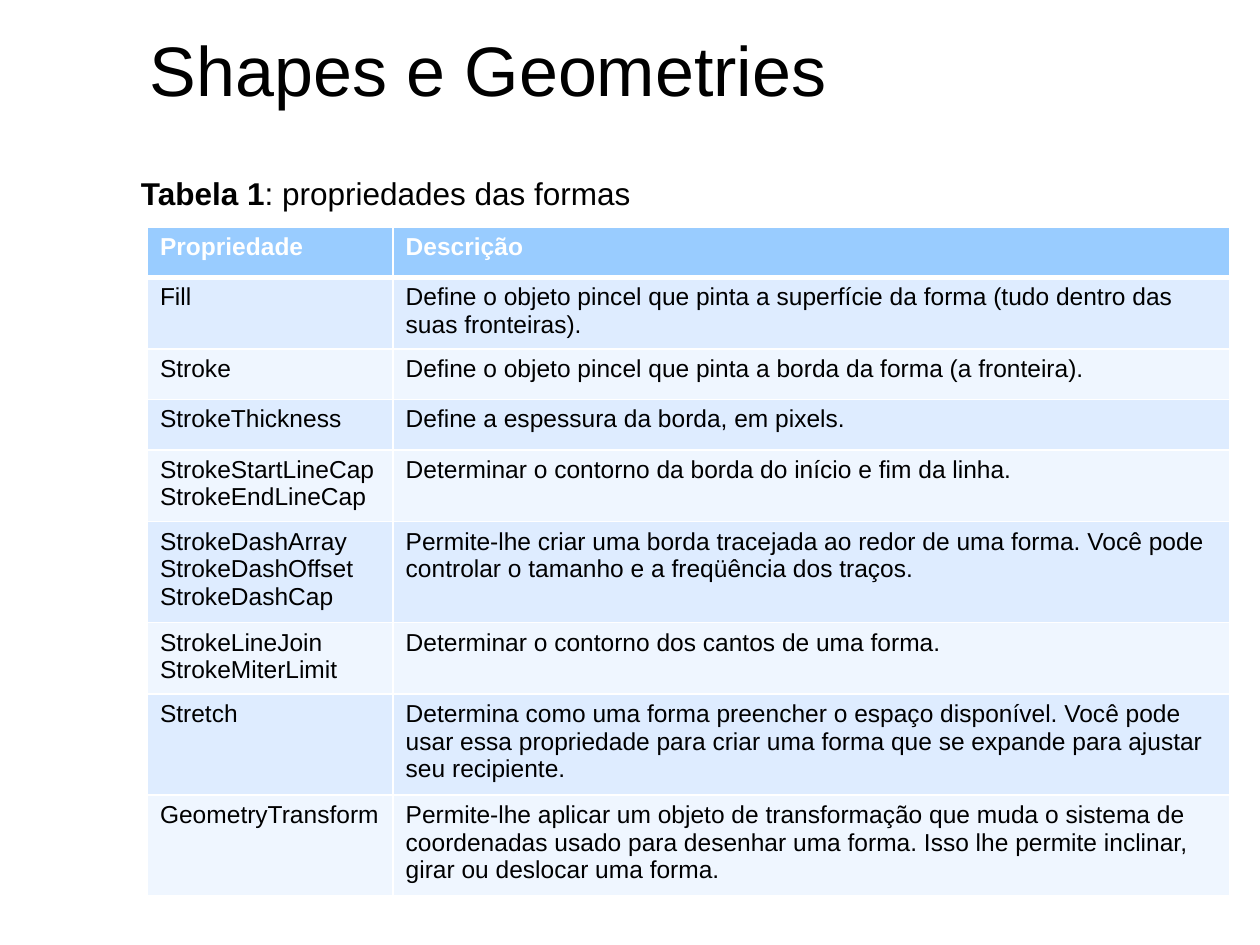
from dataclasses import dataclass

from lxml import etree
from pptx import Presentation
from pptx.dml.color import RGBColor
from pptx.enum.text import MSO_AUTO_SIZE
from pptx.oxml.ns import qn
from pptx.util import Inches, Pt

GROW = MSO_AUTO_SIZE.SHAPE_TO_FIT_TEXT


@dataclass(frozen=True)
class Theme:
    font: str = "Arial"
    text: str = "000000"
    white: str = "FFFFFF"
    header: str = "99CCFF"
    bands: tuple = ("DEECFF", "EFF6FF")
    title_size: int = 40
    caption_size: int = 18
    cell_size: int = 14
    border: int = 1
    header_border: int = 3


THEME = Theme()

COL_WIDTHS = (1.95, 6.64)
# Row height by the number of text lines in its tallest cell
ROW_HEIGHTS = {1: 0.4, 2: 0.57, 3: 0.8}

# (lines, property names, description)
ROWS = [
    (1, ["Propriedade"], "Descrição"),
    (2, ["Fill"],
     "Define o objeto pincel que pinta a superfície da forma "
     "(tudo dentro das suas fronteiras)."),
    (1, ["Stroke"],
     "Define o objeto pincel que pinta a borda da forma (a fronteira)."),
    (1, ["StrokeThickness"], "Define a espessura da borda, em pixels."),
    (2, ["StrokeStartLineCap", "StrokeEndLineCap"],
     "Determinar o contorno da borda do início e fim da linha."),
    (3, ["StrokeDashArray", "StrokeDashOffset", "StrokeDashCap"],
     "Permite-lhe criar uma borda tracejada ao redor de uma forma. "
     "Você pode controlar o tamanho e a freqüência dos traços."),
    (2, ["StrokeLineJoin", "StrokeMiterLimit"],
     "Determinar o contorno dos cantos de uma forma."),
    (3, ["Stretch"],
     "Determina como uma forma preencher o espaço disponível. "
     "Você pode usar essa propriedade para criar uma forma que se expande "
     "para ajustar seu recipiente."),
    (3, ["GeometryTransform"],
     "Permite-lhe aplicar um objeto de transformação que muda o sistema de "
     "coordenadas usado para desenhar uma forma. "
     "Isso lhe permite inclinar, girar ou deslocar uma forma."),
]


def add_run(p, text, size, color=THEME.text, bold=False):
    r = p.add_run()
    r.text = text
    for name, value in {"name": THEME.font, "size": Pt(size), "bold": bold}.items():
        setattr(r.font, name, value)
    r.font.color.rgb = RGBColor.from_string(color)


def add_text(slide, box, size, runs):
    tf = slide.shapes.add_textbox(*map(Inches, box)).text_frame
    tf.word_wrap = True
    tf.auto_size = GROW
    for text, bold in runs:
        add_run(tf.paragraphs[0], text, size, bold=bold)


def set_borders(cell, widths):
    """Draw white borders; widths maps a side tag to points."""
    tc_pr = cell._tc.get_or_add_tcPr()
    for i, (side, width) in enumerate(widths.items()):
        ln = etree.Element(qn(f"a:{side}"), w=str(Pt(width)))
        fill = etree.SubElement(ln, qn("a:solidFill"))
        etree.SubElement(fill, qn("a:srgbClr"), val=THEME.white)
        tc_pr.insert(i, ln)


def fill_cell(cell, row, lines):
    is_header = row == 0
    color = THEME.white if is_header else THEME.text
    tf = cell.text_frame
    for i, line in enumerate(lines):
        p = tf.add_paragraph() if i else tf.paragraphs[0]
        add_run(p, line, THEME.cell_size, color, is_header)
    cell.fill.solid()
    cell.fill.fore_color.rgb = RGBColor.from_string(
        THEME.header if is_header else THEME.bands[(row - 1) % 2])
    set_borders(cell, {
        "lnL": THEME.border,
        "lnR": THEME.border,
        "lnT": THEME.header_border if row == 1 else THEME.border,
        "lnB": THEME.header_border if is_header else THEME.border,
    })


def add_property_table(slide, left, top):
    heights = [ROW_HEIGHTS[lines] for lines, *_ in ROWS]
    table = slide.shapes.add_table(
        len(ROWS), len(COL_WIDTHS), Inches(left), Inches(top),
        Inches(sum(COL_WIDTHS)), Inches(sum(heights))).table
    for col, width in zip(table.columns, COL_WIDTHS):
        col.width = Inches(width)
    for i, (_, names, description) in enumerate(ROWS):
        table.rows[i].height = Inches(heights[i])
        fill_cell(table.cell(i, 0), i, names)
        fill_cell(table.cell(i, 1), i, [description])


def main():
    prs = Presentation()
    prs.slide_width, prs.slide_height = Inches(10), Inches(7.5)
    slide = prs.slides.add_slide(prs.slide_layouts[6])

    # Title
    add_text(slide, (1.09, 0.16, 6.02, 0.77), THEME.title_size,
             [("Shapes e Geometries", False)])
    # Table caption
    add_text(slide, (1.02, 1.33, 8.75, 0.4), THEME.caption_size,
             [("Tabela 1", True), (": propriedades das formas", False)])
    # Table of shape properties
    add_property_table(slide, 1.17, 1.8)

    prs.save("out.pptx")


if __name__ == "__main__":
    main()
